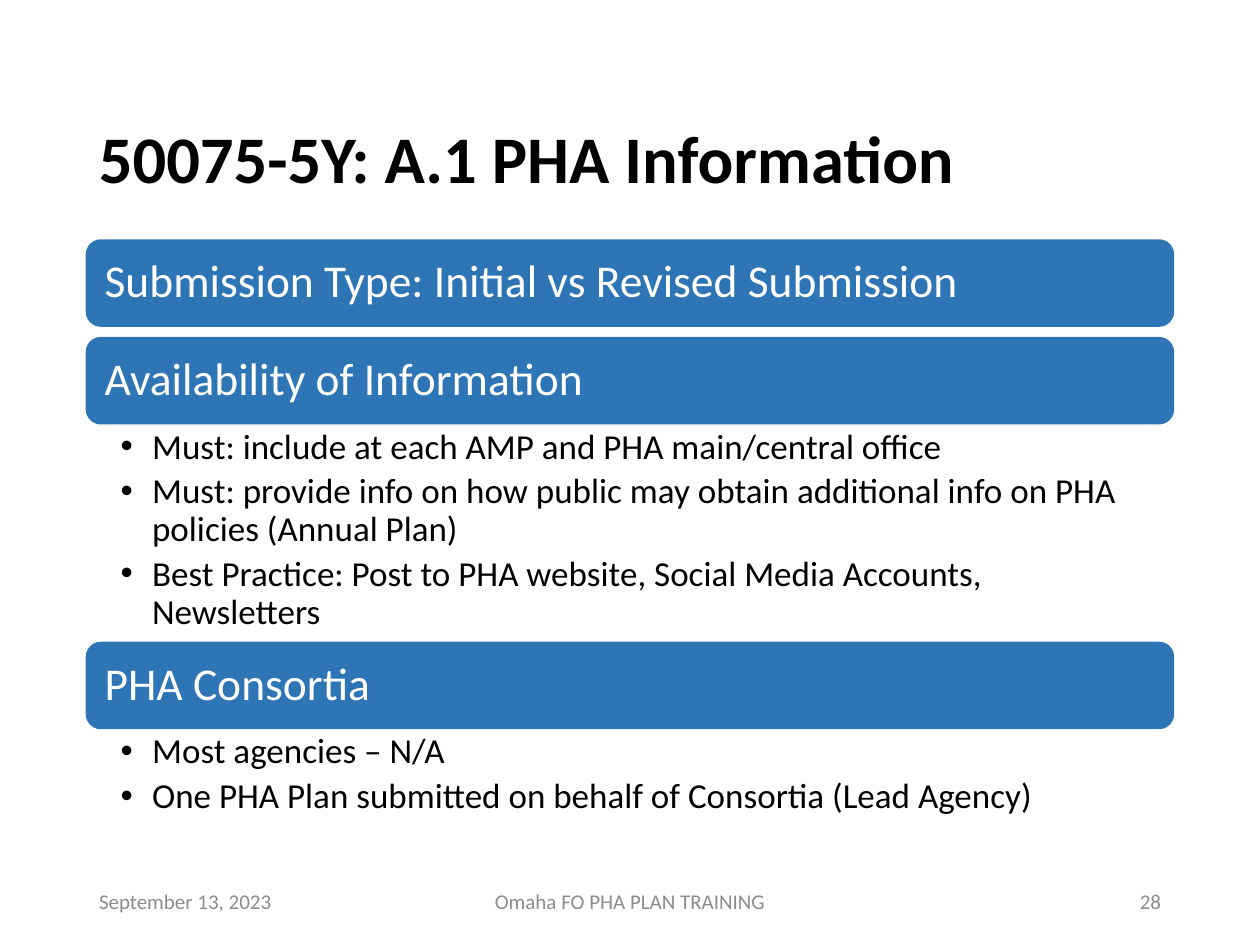
from lxml import etree
from pptx import Presentation
from pptx import util as u
from pptx.dml import color
from pptx.enum import shapes, text
from pptx.oxml import ns

COLORS = {"banner": "2E75B6", "light": "FFFFFF", "dark": "000000", "footer": "8C8C8C"}
COLS, ROWS = 160, 120
LEFT, WIDTH = 11, 138
BANNER_H, GAP = 10.9, 1.5

SECTIONS = [
    ("Submission Type: Initial vs Revised Submission", [], 0),
    ("Availability of Information", [
        "Must: include at each AMP and PHA main/central office",
        "Must: provide info on how public may obtain additional info on PHA policies (Annual Plan)",
        "Best Practice: Post to PHA website, Social Media Accounts, Newsletters",
    ], 27.8),
    ("PHA Consortia", [
        "Most agencies – N/A",
        "One PHA Plan submitted on behalf of Consortia (Lead Agency)",
    ], 12.3),
]

FOOTER = [
    ("September 13, 2023", LEFT, 36, text.PP_ALIGN.LEFT),
    ("Omaha FO PHA PLAN TRAINING", 53, 54, text.PP_ALIGN.CENTER),
    ("28", 113, 36, text.PP_ALIGN.RIGHT),
]


class Deck:
    font = "Calibri"

    def __init__(self):
        self.prs = Presentation()
        self.prs.slide_width, self.prs.slide_height = u.Inches(10), u.Inches(7.5)
        self.s = self.prs.slides.add_slide(self.prs.slide_layouts[6])

    def box(self, col, row, cols, rows):
        w, h = self.prs.slide_width / COLS, self.prs.slide_height / ROWS
        return [round(v) for v in (col * w, row * h, cols * w, rows * h)]

    def frame(self, sp, anchor=text.MSO_ANCHOR.MIDDLE, insets=(0.1, 0.05, 0.1, 0.05)):
        tf = sp.text_frame
        tf.word_wrap = True
        tf.vertical_anchor = anchor
        tf.margin_left, tf.margin_top, tf.margin_right, tf.margin_bottom = map(u.Inches, insets)
        return tf

    def run(self, p, words, size, hue, bold=False):
        r = p.add_run()
        r.text = words
        r.font.name, r.font.size, r.font.bold = self.font, u.Pt(size), bold
        r.font.color.rgb = color.RGBColor.from_string(COLORS[hue])

    def label(self, words, grid, size, hue, bold=False, align=text.PP_ALIGN.LEFT, spacing=1):
        tf = self.frame(self.s.shapes.add_textbox(*self.box(*grid)))
        p = tf.paragraphs[0]
        p.alignment, p.line_spacing = align, spacing
        self.run(p, words, size, hue, bold)

    def banner(self, words, row):
        sp = self.s.shapes.add_shape(shapes.MSO_SHAPE.ROUNDED_RECTANGLE,
                                     *self.box(LEFT, row, WIDTH, BANNER_H))
        sp.shadow.inherit = False
        fill = color.RGBColor.from_string(COLORS["banner"])
        sp.fill.solid()
        sp.fill.fore_color.rgb = fill
        sp.line.color.rgb, sp.line.width = fill, u.Pt(1)
        p = self.frame(sp, insets=(0.11, 0.11, 0.11, 0.11)).paragraphs[0]
        p.alignment, p.line_spacing = text.PP_ALIGN.LEFT, 0.9
        self.run(p, words, 26, "light")

    def bullets(self, items, row, rows):
        sp = self.s.shapes.add_textbox(*self.box(LEFT, row, WIDTH, rows))
        tf = self.frame(sp, text.MSO_ANCHOR.TOP, (0.27, 0.04, 0.2, 0.04))
        for i, item in enumerate(items):
            p = tf.add_paragraph() if i else tf.paragraphs[0]
            pPr = p._p.get_or_add_pPr()
            pPr.set("marL", str(u.Inches(0.25)))
            pPr.set("indent", str(u.Inches(-0.25)))
            etree.SubElement(pPr, ns.qn("a:buFont")).set("typeface", "Arial")
            etree.SubElement(pPr, ns.qn("a:buChar")).set("char", "•")
            p.level, p.line_spacing, p.space_after = 1, 0.9, u.Pt(4)
            self.run(p, item, 20, "dark")


def main():
    deck = Deck()
    deck.label("50075-5Y: A.1 PHA Information", (LEFT, 11.8, WIDTH, 17.6), 38, "dark",
               bold=True, spacing=0.9)
    row = 30.5
    for heading, items, rows in SECTIONS:
        deck.banner(heading, row)
        row += BANNER_H
        if items:
            deck.bullets(items, row, rows)
        row += rows or GAP
    for words, col, cols, align in FOOTER:
        deck.label(words, (col, 111.2, cols, 6.4), 12, "footer", align=align)
    deck.prs.save("out.pptx")


if __name__ == "__main__":
    main()
